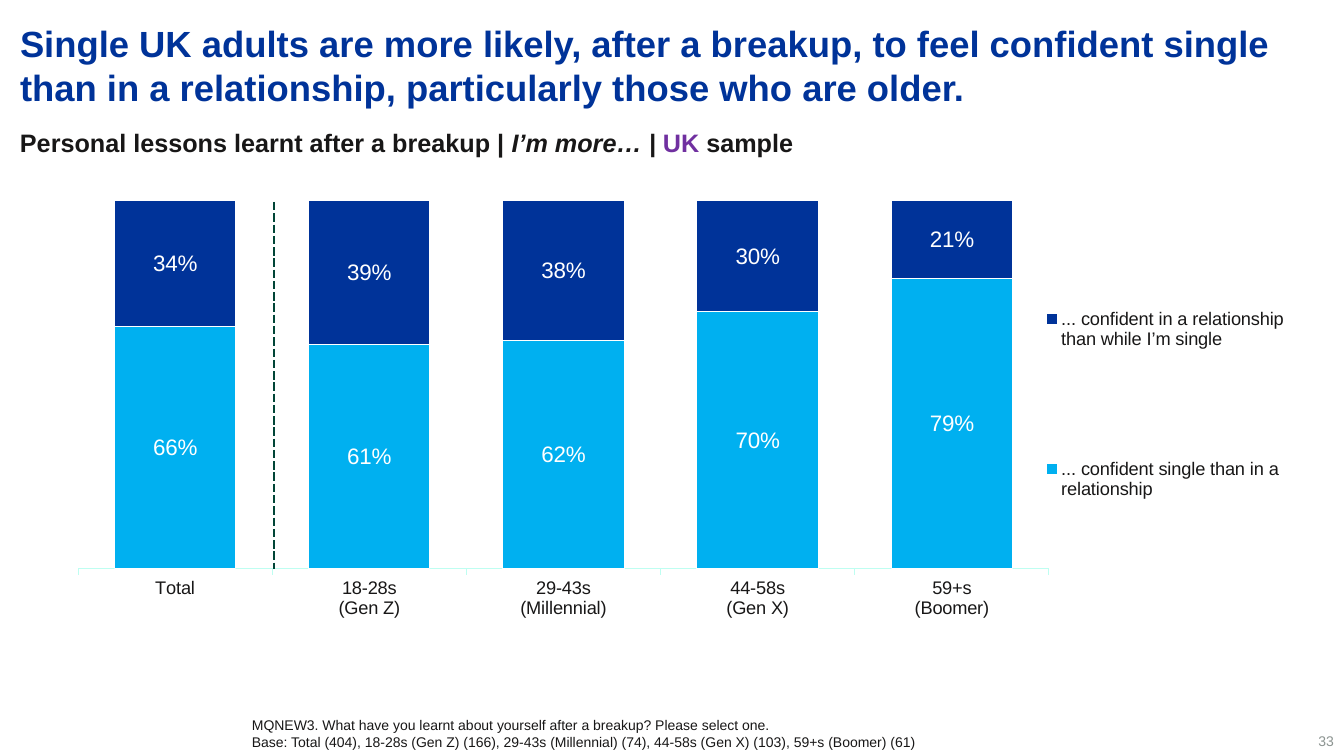
from dataclasses import dataclass

from lxml import etree
from pptx import Presentation
from pptx.chart.data import CategoryChartData
from pptx.dml.color import RGBColor
from pptx.enum.chart import XL_CHART_TYPE, XL_LEGEND_POSITION, XL_TICK_MARK
from pptx.enum.dml import MSO_LINE
from pptx.enum.shapes import MSO_CONNECTOR
from pptx.enum.text import MSO_ANCHOR, MSO_AUTO_SIZE, PP_ALIGN
from pptx.oxml.ns import qn
from pptx.util import Pt

STACKED = XL_CHART_TYPE.COLUMN_STACKED_100
LEGEND_RIGHT = XL_LEGEND_POSITION.RIGHT
TICK_OUT = XL_TICK_MARK.OUTSIDE
DASH = MSO_LINE.SQUARE_DOT
STRAIGHT = MSO_CONNECTOR.STRAIGHT
TOP, BOTTOM = MSO_ANCHOR.TOP, MSO_ANCHOR.BOTTOM
LEFT, RIGHT = PP_ALIGN.LEFT, PP_ALIGN.RIGHT
NO_AUTOFIT = MSO_AUTO_SIZE.NONE


@dataclass(frozen=True)
class Theme:
    font: str = "Arial"
    ink: str = "181717"
    navy: str = "003399"
    sky: str = "00B0F0"
    purple: str = "7030A0"
    green: str = "014537"
    mint: str = "BEFEF1"
    grey: str = "8C9491"
    white: str = "FFFFFF"
    title: int = 26
    subtitle: int = 18
    value: int = 16
    label: int = 13
    small: int = 10


THEME = Theme()

TITLE = (
    "Single UK adults are more likely, after a breakup, to feel confident single "
    "than in a relationship, particularly those who are older."
)
SUBTITLE = [
    ("Personal lessons learnt after a breakup | ", THEME.ink, False),
    ("I’m more… | ", THEME.ink, True),
    ("UK", THEME.purple, False),
    (" sample", THEME.ink, False),
]
AGE_GROUPS = ["Total", "18-28s\n(Gen Z)", "29-43s\n(Millennial)", "44-58s\n(Gen X)", "59+s\n(Boomer)"]
SERIES = [
    ("... confident single than in a relationship", [0.66, 0.61, 0.62, 0.7, 0.79], THEME.sky),
    ("... confident in a relationship than while I’m single", [0.34, 0.39, 0.38, 0.3, 0.21], THEME.navy),
]
FOOTNOTE = (
    "MQNEW3. What have you learnt about yourself after a breakup? Please select one.\n"
    "Base: Total (404), 18-28s (Gen Z) (166), 29-43s (Millennial) (74), "
    "44-58s (Gen X) (103), 59+s (Boomer) (61)"
)
PAGE_NUMBER = "33"

SLIDE_SIZE = (1344, 756)
TITLE_BOX = (20, 21, 1296, 36)
SUBTITLE_BOX = (20, 127, 1267, 37)
CHART_BOX = (45, 161, 1252, 528)
PLOT_BOX = (78, 201, 971, 368)
LEGEND_BOX = (1040, 200, 250, 410)
FOOTNOTE_BOX = (242, 712, 1055, 44)
NUMBER_BOX = (1275, 725, 59, 24)
DIVIDER = (274, 202, 274, 569)
FOOTNOTE_INSETS = (10, 5, 10, 5)
NO_INSETS = (0, 0, 0, 0)


def px(length):
    return round(length * 914400 / 100.8)


def scaled(box):
    return [px(length) for length in box]


def style_font(font, size, color, bold=False, italic=False):
    font.name = THEME.font
    font.size = Pt(size)
    font.color.rgb = RGBColor.from_string(color)
    font.bold = bold
    font.italic = italic


def style_line(line, color, width):
    line.color.rgb = RGBColor.from_string(color)
    line.width = Pt(width)


def set_up_frame(frame, anchor=TOP, insets=NO_INSETS):
    frame.word_wrap = True
    frame.auto_size = NO_AUTOFIT
    frame.vertical_anchor = anchor
    frame.margin_left, frame.margin_top, frame.margin_right, frame.margin_bottom = scaled(insets)


def fill_text(frame, text, size, color, bold=False, align=LEFT):
    frame.text = text
    for paragraph in frame.paragraphs:
        paragraph.alignment = align
        for run in paragraph.runs:
            style_font(run.font, size, color, bold)


def add_text_box(slide, box, **frame_options):
    frame = slide.shapes.add_textbox(*scaled(box)).text_frame
    set_up_frame(frame, **frame_options)
    return frame


def place_in_chart(element, box, position, inner=False):
    for old_layout in element.findall(qn("c:layout")):
        element.remove(old_layout)
    layout = etree.Element(qn("c:layout"))
    manual = etree.SubElement(layout, qn("c:manualLayout"))
    left, top, width, height = CHART_BOX
    settings = [("layoutTarget", "inner")] if inner else []
    settings += [("xMode", "edge"), ("yMode", "edge")]
    settings += [
        ("x", (box[0] - left) / width),
        ("y", (box[1] - top) / height),
        ("w", box[2] / width),
        ("h", box[3] / height),
    ]
    for name, value in settings:
        etree.SubElement(manual, qn(f"c:{name}")).set("val", str(value))
    element.insert(position, layout)


def add_title(slide):
    title = slide.shapes.title
    title.left, title.top, title.width, title.height = scaled(TITLE_BOX)
    set_up_frame(title.text_frame)
    fill_text(title.text_frame, TITLE, THEME.title, THEME.navy, bold=True)


def add_subtitle(slide):
    paragraph = add_text_box(slide, SUBTITLE_BOX).paragraphs[0]
    for text, color, italic in SUBTITLE:
        run = paragraph.add_run()
        run.text = text
        style_font(run.font, THEME.subtitle, color, bold=True, italic=italic)


def add_confidence_chart(slide):
    data = CategoryChartData(number_format="0%")
    data.categories = AGE_GROUPS
    for name, values, _ in SERIES:
        data.add_series(name, values)
    chart = slide.shapes.add_chart(STACKED, *scaled(CHART_BOX), data).chart
    chart.has_title = False
    style_font(chart.font, THEME.small, THEME.green)

    plot = chart.plots[0]
    plot.gap_width, plot.overlap = 60, 100
    plot.vary_by_categories = False
    for series, (_, _, color) in zip(plot.series, SERIES):
        series.format.fill.solid()
        series.format.fill.fore_color.rgb = RGBColor.from_string(color)
        style_line(series.format.line, THEME.white, 0.75)
        labels = series.data_labels
        labels.show_value = True
        labels.number_format, labels.number_format_is_linked = "0%", False
        style_font(labels.font, THEME.value, THEME.white)

    value_axis = chart.value_axis
    value_axis.minimum_scale, value_axis.maximum_scale, value_axis.major_unit = 0, 1, 0.2
    value_axis.has_major_gridlines = False
    value_axis.visible = False
    category_axis = chart.category_axis
    category_axis.major_tick_mark = TICK_OUT
    style_font(category_axis.tick_labels.font, THEME.label, THEME.ink)
    style_line(category_axis.format.line, THEME.mint, 0.75)

    chart.has_legend = True
    legend = chart.legend
    legend.position = LEGEND_RIGHT
    legend.include_in_layout = False
    style_font(legend.font, THEME.label, THEME.ink)
    plot_area = chart.element.find(f".//{qn('c:plotArea')}")
    place_in_chart(plot_area, PLOT_BOX, 0, inner=True)
    place_in_chart(chart.element.find(f".//{qn('c:legend')}"), LEGEND_BOX, 1)


def add_divider(slide):
    divider = slide.shapes.add_connector(STRAIGHT, *scaled(DIVIDER))
    style_line(divider.line, THEME.green, 2)
    divider.line.dash_style = DASH
    etree.SubElement(divider.element.spPr, qn("a:effectLst"))


def main():
    presentation = Presentation()
    presentation.slide_width, presentation.slide_height = scaled(SLIDE_SIZE)
    slide = presentation.slides.add_slide(presentation.slide_layouts[5])
    add_title(slide)
    add_subtitle(slide)
    add_confidence_chart(slide)
    add_divider(slide)
    footnote = add_text_box(slide, FOOTNOTE_BOX, insets=FOOTNOTE_INSETS)
    fill_text(footnote, FOOTNOTE, THEME.small, THEME.ink)
    number = add_text_box(slide, NUMBER_BOX, anchor=BOTTOM)
    fill_text(number, PAGE_NUMBER, THEME.small, THEME.grey, align=RIGHT)
    presentation.save("out.pptx")


if __name__ == "__main__":
    main()
